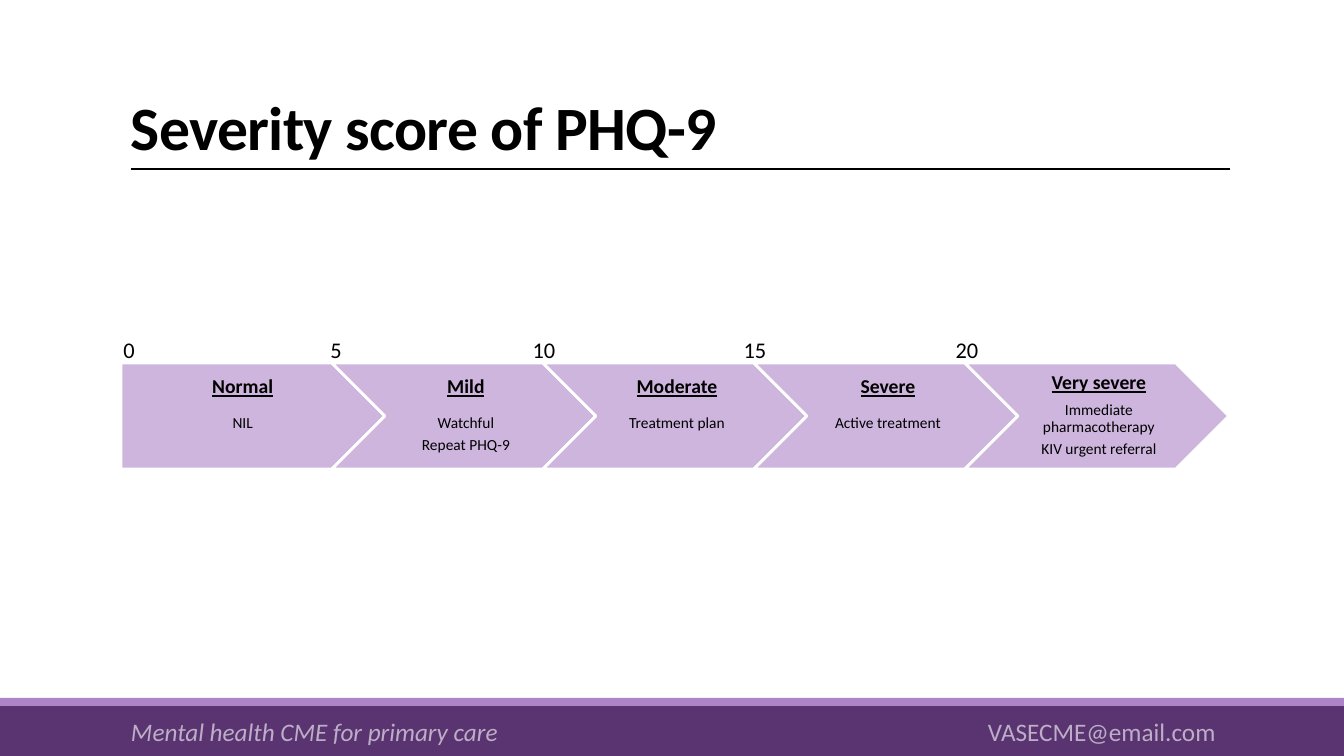
from dataclasses import dataclass

from lxml import etree
from pptx import Presentation
from pptx.dml.color import RGBColor
from pptx.enum.shapes import MSO_CONNECTOR, MSO_SHAPE
from pptx.enum.text import MSO_ANCHOR, PP_ALIGN
from pptx.oxml.ns import qn
from pptx.util import Pt

RECTANGLE, PENTAGON, CHEVRON = MSO_SHAPE.RECTANGLE, MSO_SHAPE.PENTAGON, MSO_SHAPE.CHEVRON
TOP, MIDDLE, BOTTOM = MSO_ANCHOR.TOP, MSO_ANCHOR.MIDDLE, MSO_ANCHOR.BOTTOM
LEFT, CENTER = PP_ALIGN.LEFT, PP_ALIGN.CENTER

TITLE = "Severity score of PHQ-9"
STAGES = [
    ("Normal", ["NIL"]),
    ("Mild", ["Watchful", "Repeat PHQ-9"]),
    ("Moderate", ["Treatment plan"]),
    ("Severe", ["Active treatment"]),
    ("Very severe", ["Immediate pharmacotherapy", "KIV urgent referral"]),
]
SCORE_CENTERS = {"0": 129, "5": 336, "10": 544, "15": 755, "20": 967}
# text, left, width, italic
FOOTERS = [
    ("Mental health CME for primary care", 121, 700, True),
    ("VASECME@email.com", 978, 300, False),
]


@dataclass(frozen=True)
class Theme:
    font: str = "Calibri"
    text: RGBColor = RGBColor(0, 0, 0)
    white: RGBColor = RGBColor(255, 255, 255)
    band: RGBColor = RGBColor(0x5A, 0x34, 0x71)
    stripe: RGBColor = RGBColor(0xAD, 0x84, 0xC6)
    stage: RGBColor = RGBColor(0xCE, 0xB5, 0xDD)
    title_size: int = 44
    footer_size: int = 18
    score_size: int = 16
    heading_size: int = 14
    detail_size: int = 11
    footer_alpha: int = 60


THEME = Theme()
SLIDE_WIDTH, SLIDE_HEIGHT = 1344, 756
STAGE_LEFT, STAGE_TOP, STAGE_WIDTH, STAGE_HEIGHT = 121, 363, 264, 106
STAGE_PITCH = 211
SCORE_WIDTH = 60


def px(value):
    return round(value * 914400 / 100.8)


def box(*lengths):
    return [px(length) for length in lengths]


def set_frame(frame, anchor, insets):
    """Insets are left, top, right, bottom in px."""
    frame.word_wrap = True
    frame.vertical_anchor = anchor
    (frame.margin_left, frame.margin_top,
     frame.margin_right, frame.margin_bottom) = box(*insets)


def style(paragraph, text, size, color=THEME.text, align=LEFT):
    paragraph.text = text
    paragraph.alignment = align
    font = paragraph.font
    font.name = THEME.font
    font.size = Pt(size)
    font.color.rgb = color
    return font


def add_text(slide, place, text, size, anchor=TOP, insets=(10, 5, 10, 5), **options):
    shape = slide.shapes.add_textbox(*box(*place))
    set_frame(shape.text_frame, anchor, insets)
    paragraph = shape.text_frame.paragraphs[0]
    style(paragraph, text, size, **options)
    return paragraph


def add_filled(slide, kind, place, color):
    shape = slide.shapes.add_shape(kind, *box(*place))
    shape.shadow.inherit = False
    shape.fill.solid()
    shape.fill.fore_color.rgb = color
    shape.line.fill.background()
    return shape


def add_title(slide):
    paragraph = add_text(slide, (121, 31, 1109, 137), TITLE, THEME.title_size, BOTTOM)
    paragraph.line_spacing = 0.85
    paragraph.font.bold = True
    paragraph.runs[0].font.bold = True
    paragraph.runs[0].font._element.set("spc", "-50")
    rule = slide.shapes.add_connector(MSO_CONNECTOR.STRAIGHT, *box(131, 169, 1230, 169))
    rule.line.color.rgb = THEME.text
    rule.line.width = Pt(1)
    etree.SubElement(rule._element.spPr, qn("a:effectLst"))


def add_footer(slide):
    add_filled(slide, RECTANGLE, (0, 706, SLIDE_WIDTH, 50), THEME.band)
    add_filled(slide, RECTANGLE, (0, 698, SLIDE_WIDTH, 8), THEME.stripe)
    for text, left, width, italic in FOOTERS:
        paragraph = add_text(slide, (left, 711, width, 40), text,
                             THEME.footer_size, color=THEME.white)
        paragraph.font.italic = italic
        for color in paragraph._p.iter(qn("a:srgbClr")):
            etree.SubElement(color, qn("a:alpha"), val=str(THEME.footer_alpha * 1000))


def add_stage(slide, index, heading, details):
    first, last = index == 0, index == len(STAGES) - 1
    left = STAGE_LEFT + index * STAGE_PITCH
    shape = add_filled(slide, PENTAGON if first else CHEVRON,
                       (left, STAGE_TOP, STAGE_WIDTH, STAGE_HEIGHT), THEME.stage)
    shape.line.color.rgb = THEME.white
    shape.line.width = Pt(2)
    frame = shape.text_frame
    set_frame(frame, TOP, (8 if first else 6, 10 if last else 14, 2, 4))
    paragraph = frame.paragraphs[0]
    font = style(paragraph, heading, THEME.heading_size, align=CENTER)
    font.bold = font.underline = True
    paragraph.line_spacing = 0.9
    paragraph.space_after = Pt(6 if last else 12)
    for detail in details:
        paragraph = frame.add_paragraph()
        style(paragraph, detail, THEME.detail_size, align=CENTER)
        paragraph.line_spacing = 0.9
        paragraph.space_after = Pt(4)


def main():
    presentation = Presentation()
    presentation.slide_width, presentation.slide_height = box(SLIDE_WIDTH, SLIDE_HEIGHT)
    slide = presentation.slides.add_slide(presentation.slide_layouts[6])
    add_footer(slide)
    add_title(slide)
    for index, (heading, details) in enumerate(STAGES):
        add_stage(slide, index, heading, details)
    for score, center in SCORE_CENTERS.items():
        add_text(slide, (center - SCORE_WIDTH / 2, 331, SCORE_WIDTH, 37), score,
                 THEME.score_size, MIDDLE, (0, 0, 0, 0), align=CENTER)
    presentation.save("out.pptx")


if __name__ == "__main__":
    main()
